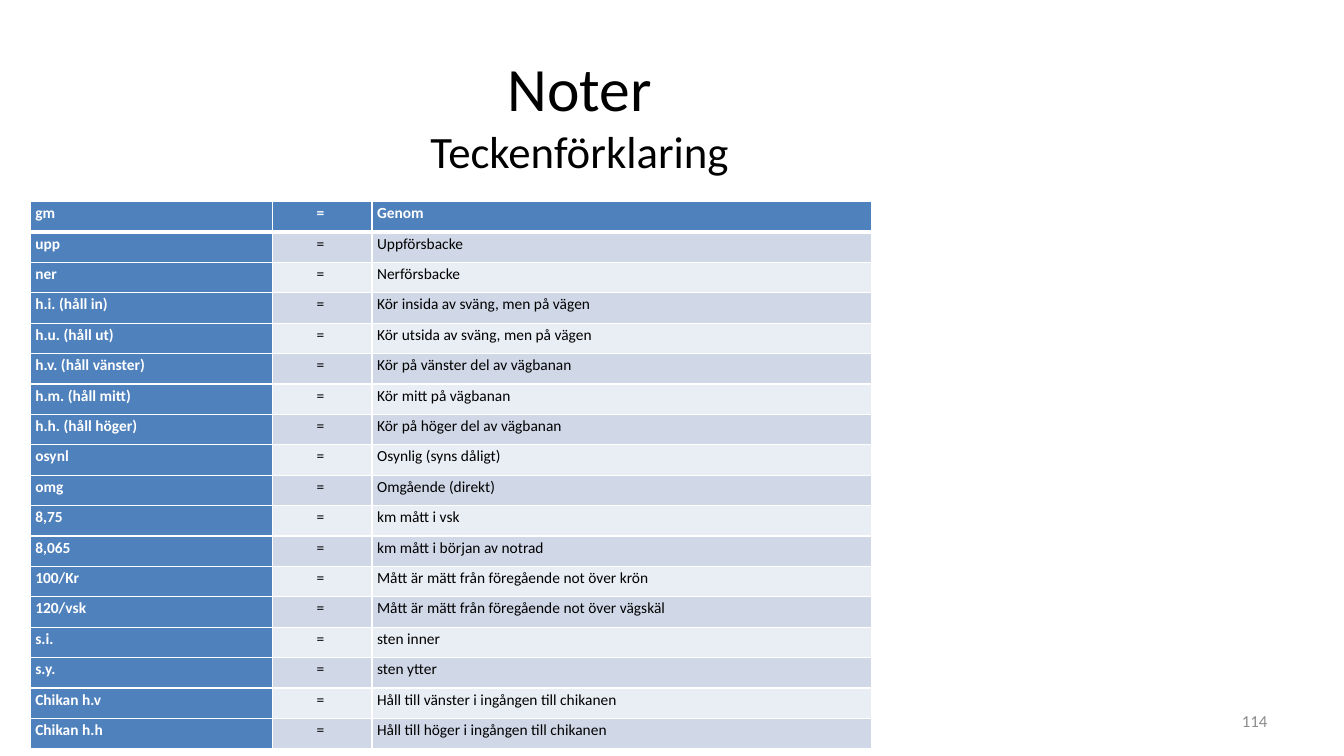
from lxml import etree
from pptx import Presentation
from pptx.dml.color import RGBColor
from pptx.enum.text import MSO_ANCHOR, PP_ALIGN
from pptx.oxml.ns import qn
from pptx.util import Inches, Pt

CENTER, LEFT, RIGHT = PP_ALIGN.CENTER, PP_ALIGN.LEFT, PP_ALIGN.RIGHT
MIDDLE = MSO_ANCHOR.MIDDLE
FONT = "Calibri"
COLORS = {"header": "4F81BD", "dark_band": "D0D8E8", "light_band": "E9EDF4",
          "white": "FFFFFF", "black": "000000", "gray": "8C8C8C"}
COLUMN_WIDTHS = (2.4, 0.99, 4.95)
ABBREVIATIONS = [
    ("gm", "Genom"),
    ("upp", "Uppförsbacke"),
    ("ner", "Nerförsbacke"),
    ("h.i. (håll in)", "Kör insida av sväng, men på vägen"),
    ("h.u. (håll ut)", "Kör utsida av sväng, men på vägen"),
    ("h.v. (håll vänster)", "Kör på vänster del av vägbanan"),
    ("h.m. (håll mitt)", "Kör mitt på vägbanan"),
    ("h.h. (håll höger)", "Kör på höger del av vägbanan"),
    ("osynl", "Osynlig (syns dåligt)"),
    ("omg", "Omgående (direkt)"),
    ("8,75", "km mått i vsk"),
    ("8,065", "km mått i början av notrad"),
    ("100/Kr", "Mått är mätt från föregående not över krön"),
    ("120/vsk", "Mått är mätt från föregående not över vägskäl"),
    ("s.i.", "sten inner"),
    ("s.y.", "sten ytter"),
    ("Chikan h.v", "Håll till vänster i ingången till chikanen"),
    ("Chikan h.h", "Håll till höger i ingången till chikanen"),
]


def rgb(name):
    """Return the named colour."""
    return RGBColor.from_string(COLORS[name])


def set_font(font, size, color, bold=False):
    """Apply the slide's typeface with a size, colour and weight."""
    font.name, font.size, font.bold = FONT, Pt(size), bold
    font.color.rgb = rgb(color)


def set_borders(cell, bottom_width):
    """Give a cell white borders, with its own width at the bottom."""
    properties = cell._tc.get_or_add_tcPr()
    widths = {"a:lnL": 1, "a:lnR": 1, "a:lnT": 1, "a:lnB": bottom_width}
    for position, (side, width) in enumerate(widths.items()):
        border = etree.Element(qn(side), w=str(Pt(width)))
        fill = etree.SubElement(border, qn("a:solidFill"))
        etree.SubElement(fill, qn("a:srgbClr"), val=COLORS["white"])
        properties.insert(position, border)


def add_heading(slide, left, top, width, height):
    """Fill the title placeholder with the heading and its subheading."""
    heading = slide.shapes.title
    heading.left, heading.top = Inches(left), Inches(top)
    heading.width, heading.height = Inches(width), Inches(height)
    heading.text_frame.vertical_anchor = MIDDLE
    paragraph = heading.text_frame.paragraphs[0]
    paragraph.alignment = CENTER
    topic = paragraph.add_run()
    topic.text = "Noter"
    set_font(topic.font, 44, "black")
    paragraph.add_line_break()
    subtopic = paragraph.add_run()
    subtopic.text = "Teckenförklaring"
    set_font(subtopic.font, 32, "black")


def fill_cell(cell, text, row, column):
    """Write and format one cell of the legend."""
    is_header = row == 0 or column == 0
    band = "dark_band" if row % 2 else "light_band"
    cell.fill.solid()
    cell.fill.fore_color.rgb = rgb("header" if is_header else band)
    set_borders(cell, 3 if row == 0 else 1)
    cell.margin_left, cell.margin_top = Inches(0.05), Inches(0.01)
    cell.margin_right, cell.margin_bottom = Inches(0.24), 0
    cell.text = text
    paragraph = cell.text_frame.paragraphs[0]
    paragraph.line_spacing = 1.07
    paragraph.alignment = LEFT
    if column == 1:
        paragraph.alignment = CENTER
        paragraph._p.get_or_add_pPr().set("marL", str(Inches(0.19)))
    set_font(paragraph.font, 11, "white" if is_header else "black", is_header)


def add_legend(slide, left, top, width, height):
    """Add the table of abbreviations and their meanings."""
    legend = slide.shapes.add_table(
        len(ABBREVIATIONS), len(COLUMN_WIDTHS),
        Inches(left), Inches(top), Inches(width), Inches(height)).table
    legend.first_col = True
    for column, column_width in zip(legend.columns, COLUMN_WIDTHS):
        column.width = Inches(column_width)
    for row, (abbreviation, meaning) in enumerate(ABBREVIATIONS):
        for column, text in enumerate((abbreviation, "= ", meaning)):
            fill_cell(legend.cell(row, column), text, row, column)


def add_page_number(slide, left, top, width, height):
    """Add the page number at the right of its box."""
    page_number = slide.shapes.add_textbox(
        Inches(left), Inches(top), Inches(width), Inches(height)).text_frame
    page_number.word_wrap = True
    page_number.vertical_anchor = MIDDLE
    paragraph = page_number.paragraphs[0]
    paragraph.text = "114"
    paragraph.alignment = RIGHT
    set_font(paragraph.font, 12, "gray")


def main():
    """Build and save the slide."""
    presentation = Presentation()
    presentation.slide_width = Inches(13.33)
    presentation.slide_height = Inches(7.5)
    slide = presentation.slides.add_slide(presentation.slide_layouts[5])
    add_heading(slide, 0, 0.4, 11.5, 1.45)
    add_legend(slide, 0.3, 2, sum(COLUMN_WIDTHS), 5.43)
    add_page_number(slide, 9.56, 6.95, 3.11, 0.4)
    presentation.save("out.pptx")


if __name__ == "__main__":
    main()
